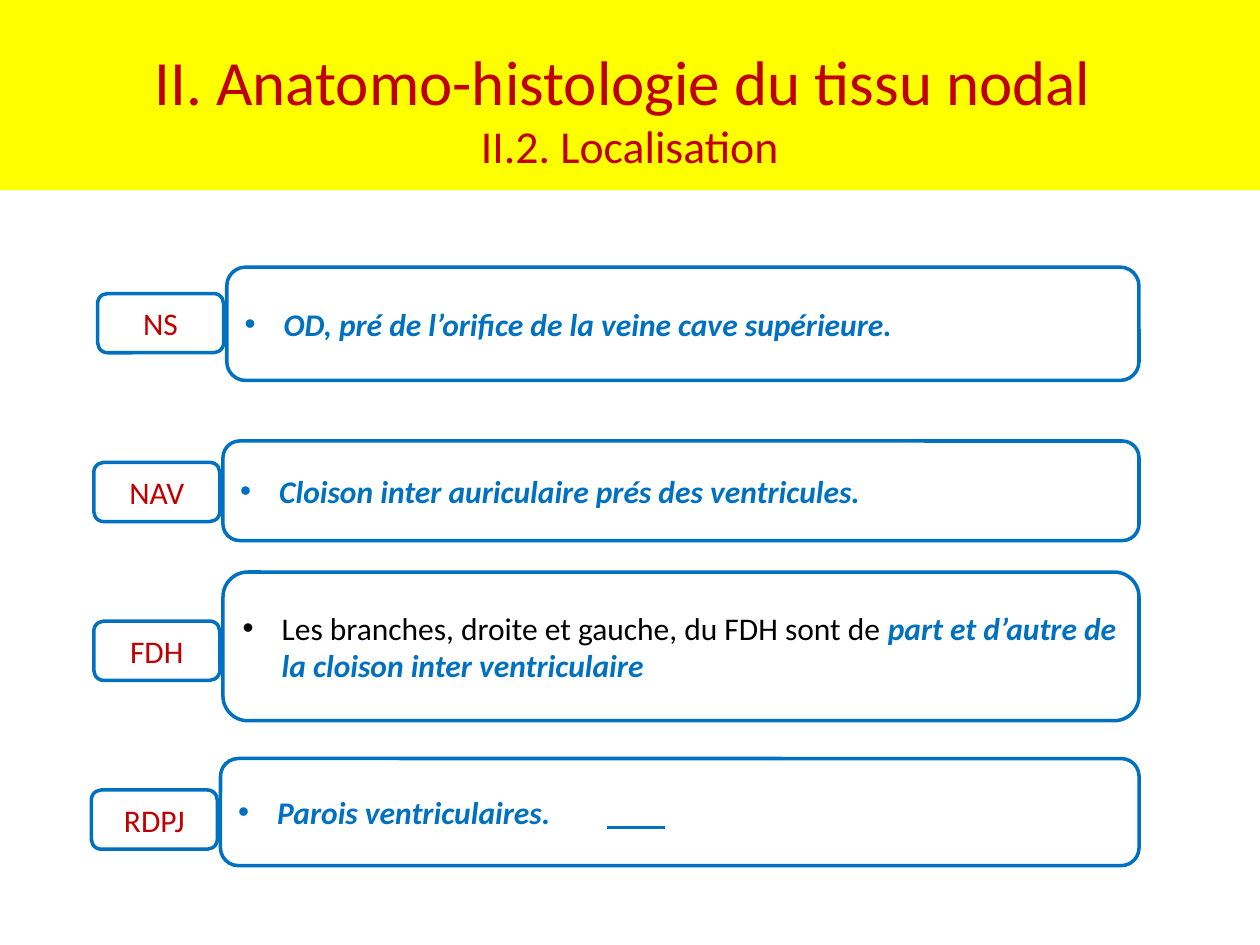
from lxml import etree
from pptx import Presentation
from pptx import util as u
from pptx.dml.color import RGBColor
from pptx.enum import shapes, text
from pptx.oxml.ns import qn

RED = RGBColor(0xC0, 0x00, 0x00)
BLUE = RGBColor(0x00, 0x70, 0xC0)
YELLOW = RGBColor(0xFF, 0xFF, 0x00)
BLACK = RGBColor(0x00, 0x00, 0x00)
FONT = "Calibri"
COLS, ROWS = 100, 75
LABEL_W, LABEL_H, LABEL_STEP = 10, 4.7, 10.25
BOX_RIGHT = 90.4

prs = Presentation()
prs.slide_width, prs.slide_height = u.Inches(10), u.Inches(7.5)


def grid(left, top, width, height):
    cw, rh = prs.slide_width / COLS, prs.slide_height / ROWS
    return [int(n) for n in (left * cw, top * rh, width * cw, height * rh)]


def style(r, size, color, strong=False):
    f = r.font
    f.name, f.size, f.bold, f.italic = FONT, u.Pt(size), strong, strong
    f.color.rgb = color


def add_title(s, box, lines):
    sp = s.shapes.title
    sp.left, sp.top, sp.width, sp.height = grid(*box)
    sp.fill.solid()
    sp.fill.fore_color.rgb = YELLOW
    tf = sp.text_frame
    tf.auto_size = text.MSO_AUTO_SIZE.NONE
    tf.vertical_anchor = text.MSO_ANCHOR.MIDDLE
    tf.margin_top = u.Inches(0.25)
    tf.text = "\v".join(line for line, size in lines)
    p = tf.paragraphs[0]
    p.alignment = text.PP_ALIGN.CENTER
    for r, (line, size) in zip(p.runs, lines):
        style(r, size, RED)


def add_frame(s, box, align):
    sp = s.shapes.add_shape(shapes.MSO_SHAPE.ROUNDED_RECTANGLE, *grid(*box))
    sp.shadow.inherit = False
    sp.fill.background()
    sp.line.color.rgb, sp.line.width = BLUE, u.Pt(2)
    tf = sp.text_frame
    tf.word_wrap = True
    tf.vertical_anchor = text.MSO_ANCHOR.MIDDLE
    p = tf.paragraphs[0]
    p.alignment = align
    return p


def add_bullet(p):
    pPr = p._p.get_or_add_pPr()
    indent = u.Inches(0.31)
    pPr.set("marL", str(indent))
    pPr.set("indent", str(-indent))
    etree.SubElement(pPr, qn("a:buFont")).set("typeface", "Arial")
    etree.SubElement(pPr, qn("a:buChar")).set("char", "•")


def add_location(s, box, label, label_top, plain, strong):
    left, top, width, height = box
    p = add_frame(s, (left - LABEL_STEP, label_top, LABEL_W, LABEL_H),
                  text.PP_ALIGN.CENTER)
    p.text = label
    style(p.runs[0], 18, RED)

    p = add_frame(s, box, text.PP_ALIGN.LEFT)
    add_bullet(p)
    for words, color, is_strong in ((plain, BLACK, False), (strong, BLUE, True)):
        if words:
            r = p.add_run()
            r.text = words
            style(r, 18, color, is_strong)


def add_rule(s, left, top, width):
    x, y, w, h = grid(left, top, width, 0)
    c = s.shapes.add_connector(shapes.MSO_CONNECTOR.STRAIGHT, x, y, x + w, y)
    c.line.color.rgb, c.line.width = BLUE, u.Pt(1.5)
    etree.SubElement(c._element.spPr, qn("a:effectLst"))


def main():
    s = prs.slides.add_slide(prs.slide_layouts[5])
    add_title(s, (0, 0, COLS, 15.1),
              [("II. Anatomo-histologie du tissu nodal ", 36),
               ("II.2. Localisation", 26.1)])
    locations = [
        (18, 21.2, 9, "NS", 23.3, "",
         "OD, pré de l’orifice de la veine cave supérieure."),
        (17.7, 35, 7.9, "NAV", 36.7, "",
         "Cloison inter auriculaire prés des ventricules."),
        (17.7, 45.4, 11.8, "FDH", 49.3,
         "Les branches, droite et gauche, du FDH sont de ",
         "part et d’autre de la cloison inter ventriculaire"),
        (17.5, 60.2, 8.5, "RDPJ", 62.7, "", "Parois ventriculaires."),
    ]
    for left, top, height, *content in locations:
        add_location(s, (left, top, BOX_RIGHT - left, height), *content)
    add_rule(s, 48.2, 65.7, 4.6)
    prs.save("out.pptx")


if __name__ == "__main__":
    main()
